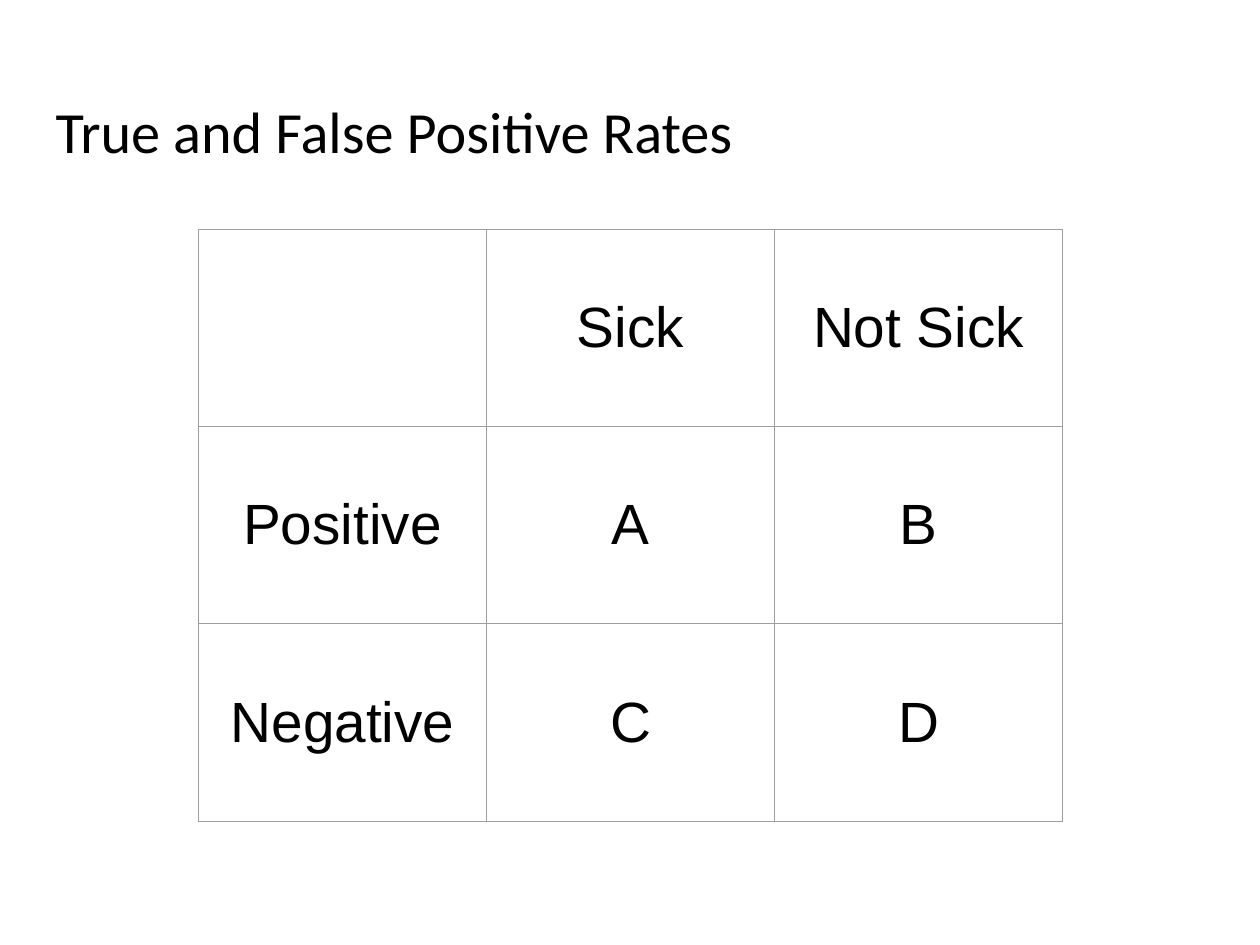
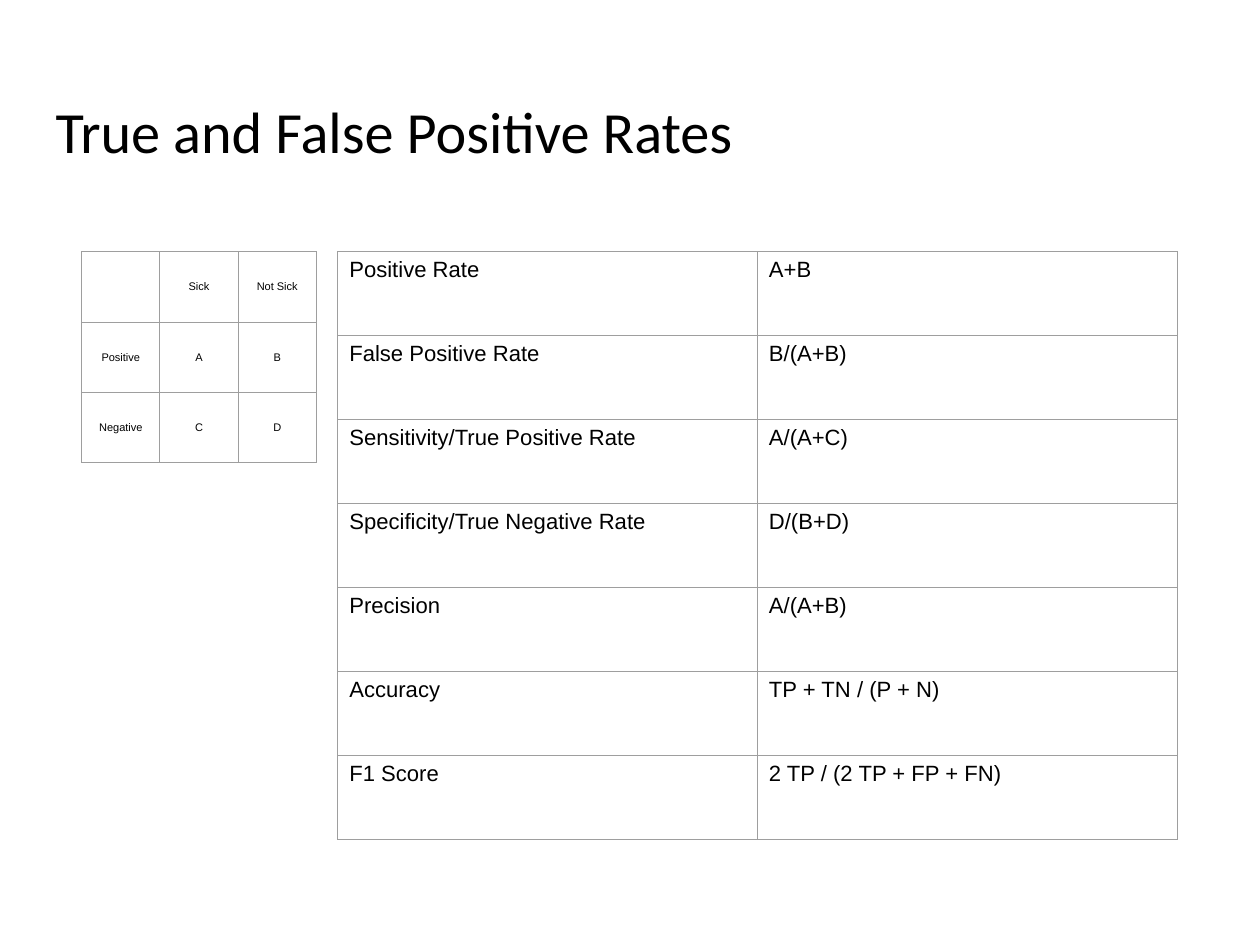
from dataclasses import dataclass

from lxml import etree
from pptx import Presentation
from pptx.dml.color import RGBColor
from pptx.enum.text import MSO_ANCHOR, PP_ALIGN
from pptx.oxml.ns import qn
from pptx.util import Inches, Pt

LEFT, CENTER = PP_ALIGN.LEFT, PP_ALIGN.CENTER
TOP, MIDDLE = MSO_ANCHOR.TOP, MSO_ANCHOR.MIDDLE


@dataclass(frozen=True)
class Theme:
    background: str = "FFFFFF"
    text: str = "000000"
    border: str = "9E9E9E"
    border_width: float = 0.75
    title_font: str = "Calibri"
    body_font: str = "Arial"
    title_size: int = 37
    large_size: int = 36
    body_size: int = 14
    small_size: int = 7


THEME = Theme()
TITLE = "True and False Positive Rates"
CONFUSION_MATRIX = [
    ("", "Sick", "Not Sick"),
    ("Positive", "A", "B"),
    ("Negative", "C", "D"),
]
RATES = [
    ("Positive Rate", "A+B"),
    ("False Positive Rate", "B/(A+B)"),
    ("Sensitivity/True Positive Rate", "A/(A+C)"),
    ("Specificity/True Negative Rate", "D/(B+D)"),
    ("Precision", "A/(A+B)"),
    ("Accuracy", "TP + TN / (P + N)"),
    ("F1 Score", "2 TP / (2 TP + FP + FN)"),
]


def write(tf, text, *, size, font=THEME.body_font, color=THEME.text,
          align=LEFT, line_spacing=None):
    p = tf.paragraphs[0]
    p.alignment = align
    p.line_spacing = line_spacing
    p.font.size = Pt(size)
    if text:
        r = p.add_run()
        r.text = text
        r.font.size = Pt(size)
        r.font.name = font
        r.font.color.rgb = RGBColor.from_string(color)


def set_margins(target, horizontal, vertical):
    target.margin_left = target.margin_right = Inches(horizontal)
    target.margin_top = target.margin_bottom = Inches(vertical)


def add_borders(cell):
    tc_pr = cell._tc.get_or_add_tcPr()
    for i, side in enumerate(("lnL", "lnR", "lnT", "lnB")):
        ln = etree.Element(qn(f"a:{side}"), w=str(Pt(THEME.border_width)))
        fill = etree.SubElement(ln, qn("a:solidFill"))
        etree.SubElement(fill, qn("a:srgbClr"), val=THEME.border)
        tc_pr.insert(i, ln)


def add_grid(s, rows, left, top, col_width, row_height, *, size,
             align=LEFT, anchor=TOP, margins=(0.1, 0.05)):
    n_rows, n_cols = len(rows), len(rows[0])
    table = s.shapes.add_table(
        n_rows, n_cols, Inches(left), Inches(top),
        Inches(col_width * n_cols), Inches(row_height * n_rows)).table
    table.first_row = table.horz_banding = False
    for col in table.columns:
        col.width = Inches(col_width)
    for row, texts in zip(table.rows, rows):
        row.height = Inches(row_height)
        for cell, text in zip(row.cells, texts):
            cell.fill.background()
            add_borders(cell)
            cell.vertical_anchor = anchor
            set_margins(cell, *margins)
            write(cell.text_frame, text, size=size, align=align)


def add_titled_slide(prs):
    s = prs.slides.add_slide(prs.slide_layouts[6])
    s.background.fill.solid()
    s.background.fill.fore_color.rgb = RGBColor.from_string(THEME.background)
    sp = s.shapes.add_textbox(
        Inches(0.38), Inches(0.72), Inches(10.35), Inches(0.93))
    tf = sp.text_frame
    tf.word_wrap = True
    tf.vertical_anchor = MIDDLE
    set_margins(tf, 0.11, 0.11)
    write(tf, TITLE, size=THEME.title_size, font=THEME.title_font,
          line_spacing=0.9)
    return s


def main():
    prs = Presentation()
    prs.slide_width, prs.slide_height = Inches(11.11), Inches(8.33)

    s = add_titled_slide(prs)
    add_grid(s, CONFUSION_MATRIX, 1.75, 2.02, 2.54, 1.74,
             size=THEME.large_size, align=CENTER, anchor=MIDDLE)

    s = add_titled_slide(prs)
    add_grid(s, CONFUSION_MATRIX, 0.72, 2.22, 0.69, 0.62,
             size=THEME.small_size, align=CENTER, anchor=MIDDLE,
             margins=(0.08, 0.04))
    add_grid(s, RATES, 2.98, 2.22, 3.7, 0.74, size=THEME.body_size)

    prs.save("out.pptx")


if __name__ == "__main__":
    main()
